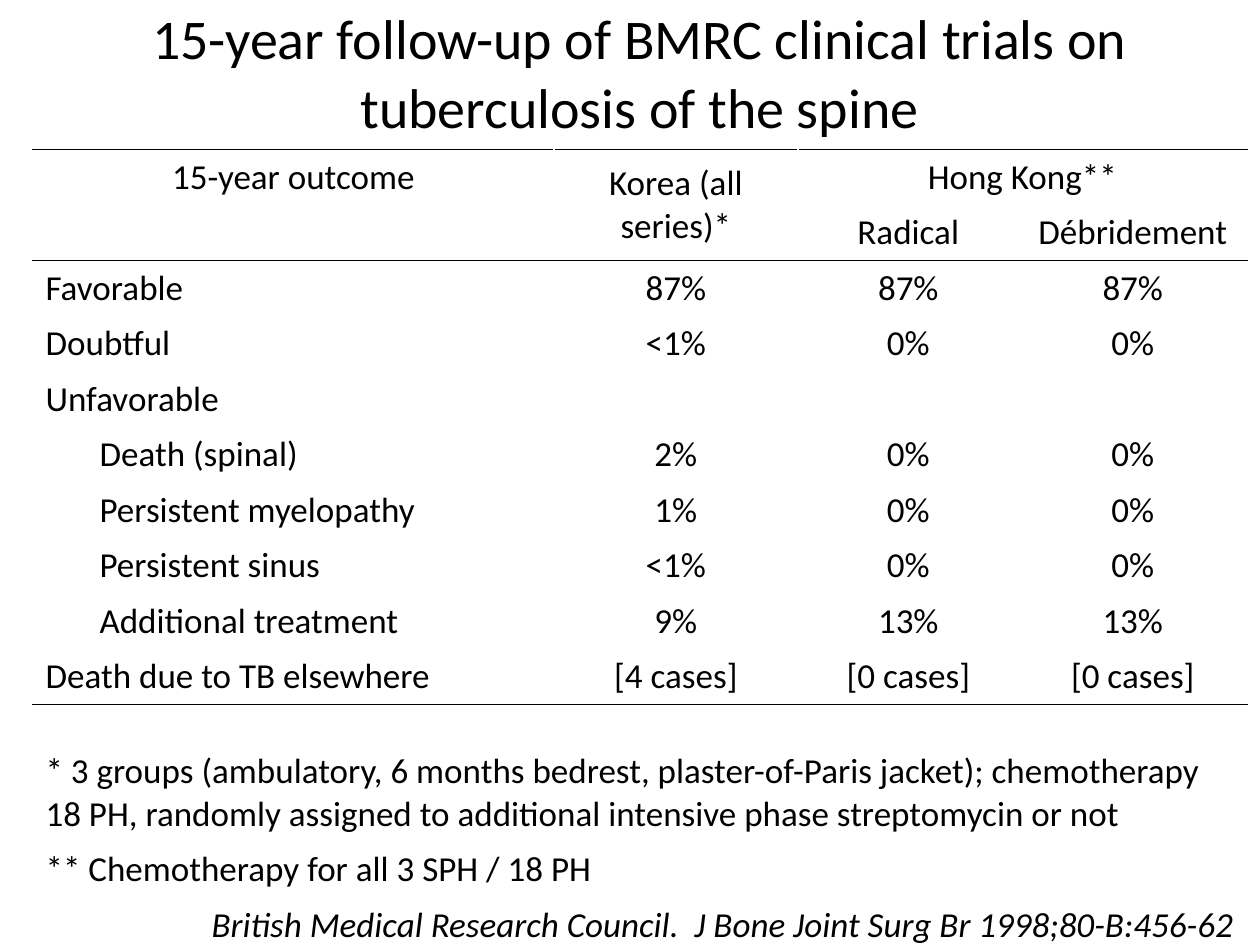
"""Build the slide with the 15-year outcomes of the spinal tuberculosis trials."""
from lxml import etree
from pptx import Presentation
from pptx import util as u
from pptx.dml.color import RGBColor
from pptx.enum import text
from pptx.oxml.ns import qn

PX = 914400 // 126
THEME = {"font": "Calibri", "ink": "000000", "title": 32, "body": 20, "rule": 1}
LEFT, CENTER, RIGHT = text.PP_ALIGN.LEFT, text.PP_ALIGN.CENTER, text.PP_ALIGN.RIGHT
TITLE = "15-year follow-up of BMRC clinical trials on tuberculosis of the spine"
GROUPS_NOTE = (
    "* 3 groups (ambulatory, 6 months bedrest, plaster-of-Paris jacket); chemotherapy "
    "18 PH, randomly assigned to additional intensive phase streptomycin or not"
)
CITATION = "British Medical Research Council.  J Bone Joint Surg Br 1998;80-B:456-62"

COLUMNS = [54, 467, 244, 221, 228]
ROWS = [149] + [55] * 10 + [39, 98, 55, 55]
CONTENT = [
    [TITLE],
    ["15-year outcome", "", "Korea (all series)*", "Hong Kong**"],
    ["", "", "", "Radical", "Débridement"],
    ["Favorable", "", "87%", "87%", "87%"],
    ["Doubtful", "", "<1%", "0%", "0%"],
    ["Unfavorable"],
    ["", "Death (spinal)", "2%", "0%", "0%"],
    ["", "Persistent myelopathy", "1%", "0%", "0%"],
    ["", "Persistent sinus", "<1%", "0%", "0%"],
    ["", "Additional treatment", "9%", "13%", "13%"],
    ["Death due to TB elsewhere", "", "[4 cases]", "[0 cases]", "[0 cases]"],
    [],
    [GROUPS_NOTE],
    ["** Chemotherapy for all 3 SPH / 18 PH"],
    [CITATION],
]
TITLE_ROW, GAP_ROW, CITATION_ROW = 0, 11, 14
HEADER_ROWS = (0, 1, 2)
RULES_BELOW = (0, 2, 10)
FULL_WIDTH_ROWS = (0, 11, 12, 13, 14)
LABEL_ROWS = (3, 4, 5, 10)


def draw_rule(cell, side):
    line = etree.SubElement(cell._tc.get_or_add_tcPr(), qn(f"a:{side}"))
    line.set("w", str(u.Pt(THEME["rule"])))
    fill = etree.SubElement(line, qn("a:solidFill"))
    etree.SubElement(fill, qn("a:srgbClr")).set("val", THEME["ink"])


def write(cell, words, size, align, italic):
    para = cell.text_frame.paragraphs[0]
    para.text = words
    para.alignment = align
    for span in para.runs:
        span.font.name = THEME["font"]
        span.font.size = u.Pt(size)
        span.font.italic = italic
        span.font.color.rgb = RGBColor.from_string(THEME["ink"])


deck = Presentation()
deck.slide_width, deck.slide_height = 1260 * PX, 945 * PX
page = deck.slides.add_slide(deck.slide_layouts[6])

frame = page.shapes.add_table(
    len(ROWS), len(COLUMNS), 33 * PX, 0, sum(COLUMNS) * PX, sum(ROWS) * PX
)
table = frame.table
table.first_row = table.horz_banding = False
for column, width in zip(table.columns, COLUMNS):
    column.width = width * PX
for row, height in zip(table.rows, ROWS):
    row.height = height * PX

merges = [((row, 0), (row, 4)) for row in FULL_WIDTH_ROWS]
merges += [((row, 0), (row, 1)) for row in LABEL_ROWS]
merges += [((1, 0), (2, 1)), ((1, 2), (2, 2)), ((1, 3), (1, 4))]
for first, last in merges:
    table.cell(*first).merge(table.cell(*last))

for r, row in enumerate(table.rows):
    for c, cell in enumerate(row.cells):
        if r - 1 in RULES_BELOW and not (r == 1 and cell.is_spanned and c == 5):
            draw_rule(cell, "lnT")
        if r in RULES_BELOW or (r == 1 and c < 3):
            draw_rule(cell, "lnB")
        cell.fill.background()
        if r == GAP_ROW:
            cell.margin_top = cell.margin_bottom = 0
        if c < len(CONTENT[r]) and CONTENT[r][c]:
            align = CENTER if r in HEADER_ROWS or c > 1 else LEFT
            if r == CITATION_ROW:
                align = RIGHT
            size = THEME["title"] if r == TITLE_ROW else THEME["body"]
            write(cell, CONTENT[r][c], size, align, r == CITATION_ROW)
table.cell(1, 2).vertical_anchor = text.MSO_ANCHOR.MIDDLE

deck.save("out.pptx")
